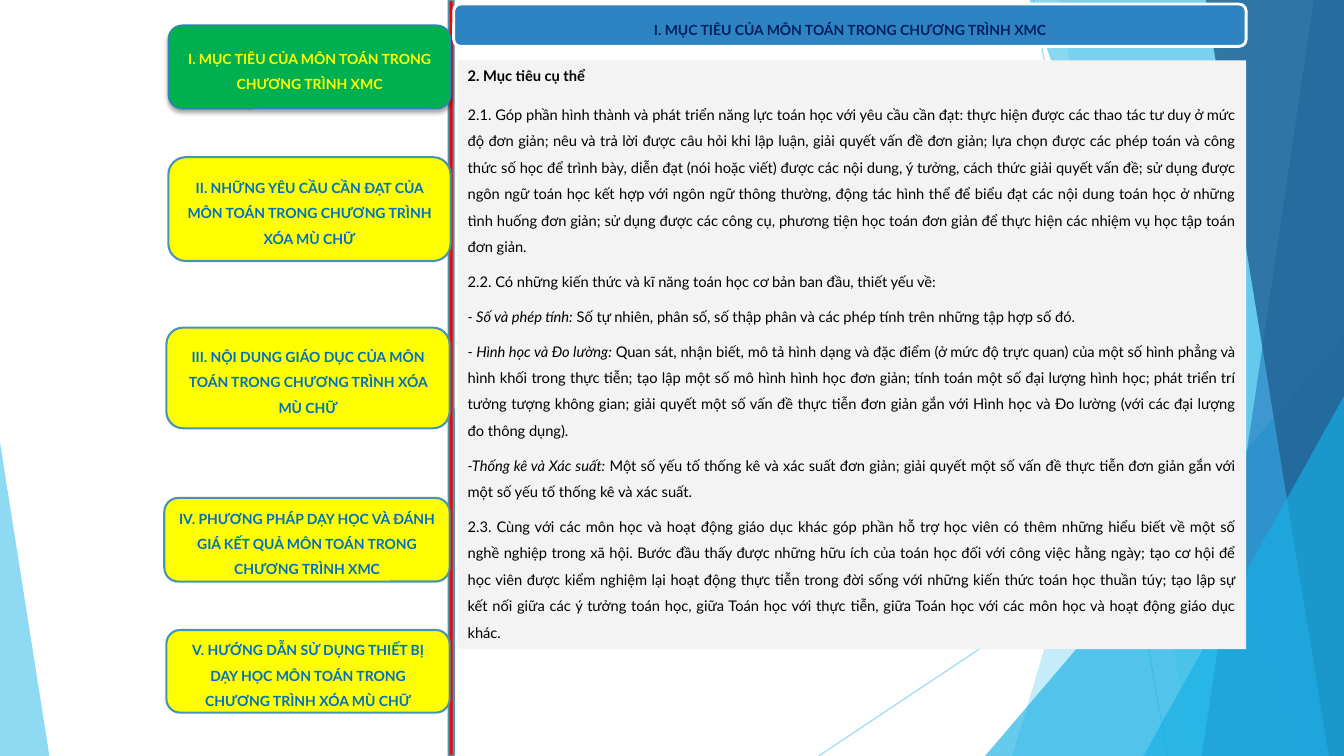
"""Build the slide on the goals of mathematics in the literacy programme."""
from pptx import Presentation
from pptx.dml.color import RGBColor
from pptx.enum.shapes import MSO_CONNECTOR, MSO_SHAPE as SHAPE
from pptx.enum.text import MSO_ANCHOR as ANCHOR, MSO_AUTO_SIZE, PP_ALIGN as ALIGN
from pptx.oxml.ns import qn
from pptx.util import Inches, Pt
from lxml.etree import SubElement

FONT = "Lato"
WIDTH, HEIGHT = 13.33, 7.5
COLORS = {
    "sky": "5FCBEF", "cyan": "17B0E4", "blue": "2E83C3", "deep": "226292",
    "teal": "4696B1", "red": "FF0000", "green": "00B050", "yellow": "FFFF00",
    "link": "0070C0", "navy": "002060", "gray": "F3F3F3", "white": "FFFFFF",
    "black": "000000",
}
HEADING = "I. MỤC TIÊU CỦA MÔN TOÁN TRONG CHƯƠNG TRÌNH XMC"
RAYS = [((10.25, 0), (11.58, 7.5)), ((13.33, 4.03), (8.12, 7.5))]
FACETS = [
    ("wedge", "sky", 36, (12.28, 10.04)),
    ("wedge", "sky", 20, (10.5, 11.83)),
    ("triangle", "cyan", 66, (9.77, 3.33, 3.56, 4.17, 1)),
    ("wedge", "cyan", 50, (10.21, 12.91)),
    ("wedge", "blue", 70, (13.03, 11.92)),
    ("wedge", "deep", 80, (11.96, 13.18)),
    ("triangle", "cyan", 66, (11.34, 3.93, 1.99, 3.57, 1)),
    ("triangle", "sky", 70, (0, 4.39, 0.49, 3.11, 0)),
]
PENDING = ("yellow", "teal", 1.5, "link")
BOXES = [
    ((1.67, 0.25, 2.8, 0.83), ("green", "blue", 1, "yellow"), HEADING),
    ((1.67, 1.56, 2.8, 1.03), PENDING,
     "II. NHỮNG YÊU CẦU CẦN ĐẠT CỦA MÔN TOÁN TRONG CHƯƠNG TRÌNH XÓA MÙ CHỮ"),
    ((1.65, 3.25, 2.81, 1), PENDING,
     "III. NỘI DUNG GIÁO DỤC CỦA MÔN TOÁN TRONG CHƯƠNG TRÌNH XÓA MÙ CHỮ"),
    ((1.63, 4.94, 2.83, 0.83), PENDING,
     "IV. PHƯƠNG PHÁP DẠY HỌC VÀ ĐÁNH GIÁ KẾT QUẢ MÔN TOÁN TRONG CHƯƠNG TRÌNH XMC"),
    ((1.65, 6.25, 2.81, 0.82), PENDING,
     "V. HƯỚNG DẪN SỬ DỤNG THIẾT BỊ DẠY HỌC MÔN TOÁN TRONG CHƯƠNG TRÌNH XÓA MÙ CHỮ"),
    ((4.5, 0.04, 7.86, 0.42), ("blue", "white", 2, "navy"), HEADING),
]
SUBTITLE = "2. Mục tiêu cụ thể"
GOALS = [
    ("", "2.1. Góp phần hình thành và phát triển năng lực toán học với yêu cầu cần đạt: "
     "thực hiện được các thao tác tư duy ở mức độ đơn giản; nêu và trả lời được câu hỏi khi "
     "lập luận, giải quyết vấn đề đơn giản; lựa chọn được các phép toán và công thức số học "
     "để trình bày, diễn đạt (nói hoặc viết) được các nội dung, ý tưởng, cách thức giải quyết "
     "vấn đề; sử dụng được ngôn ngữ toán học kết hợp với ngôn ngữ thông thường, động tác hình "
     "thể để biểu đạt các nội dung toán học ở những tình huống đơn giản; sử dụng được các công "
     "cụ, phương tiện học toán đơn giản để thực hiện các nhiệm vụ học tập toán đơn giản."),
    ("", "2.2. Có những kiến thức và kĩ năng toán học cơ bản ban đầu, thiết yếu về:"),
    ("- Số và phép tính:",
     " Số tự nhiên, phân số, số thập phân và các phép tính trên những tập hợp số đó."),
    ("- Hình học và Đo lường: ",
     "Quan sát, nhận biết, mô tả hình dạng và đặc điểm (ở mức độ trực quan) của một số hình "
     "phẳng và hình khối trong thực tiễn; tạo lập một số mô hình hình học đơn giản; tính toán "
     "một số đại lượng hình học; phát triển trí tưởng tượng không gian; giải quyết một số vấn "
     "đề thực tiễn đơn giản gắn với Hình học và Đo lường (với các đại lượng đo thông dụng)."),
    ("-Thống kê và Xác suất:",
     " Một số yếu tố thống kê và xác suất đơn giản; giải quyết một số vấn đề thực tiễn đơn "
     "giản gắn với một số yếu tố thống kê và xác suất."),
    ("", "2.3. Cùng với các môn học và hoạt động giáo dục khác góp phần hỗ trợ học viên có thêm "
     "những hiểu biết về một số nghề nghiệp trong xã hội. Bước đầu thấy được những hữu ích của "
     "toán học đối với công việc hằng ngày; tạo cơ hội để học viên được kiểm nghiệm lại hoạt "
     "động thực tiễn trong đời sống với những kiến thức toán học thuần túy; tạo lập sự kết nối "
     "giữa các ý tưởng toán học, giữa Toán học với thực tiễn, giữa Toán học với các môn học và "
     "hoạt động giáo dục khác."),
]


def color(name):
    return RGBColor.from_string(COLORS[name])


def set_alpha(s, percent):
    for clr in s._element.spPr.iter(qn("a:srgbClr")):
        SubElement(clr, qn("a:alpha"), val=str(percent * 1000))


def paint(s, fill, line=None, width=0):
    s.shadow.inherit = False
    s.fill.solid()
    s.fill.fore_color.rgb = color(fill)
    if line:
        s.line.color.rgb = color(line)
        s.line.width = Pt(width)
    else:
        s.line.fill.background()


def add_preset(shapes, kind, at):
    return shapes.add_shape(kind, *map(Inches, at))


def add_ray(shapes, start, end):
    s = shapes.add_connector(MSO_CONNECTOR.STRAIGHT, *map(Inches, start + end))
    s.line.color.rgb = color("sky")
    s.line.width = Pt(0.75)
    set_alpha(s, 70)
    SubElement(s._element.spPr, qn("a:effectLst"))


def add_facet(shapes, kind, fill, alpha, geometry):
    if kind == "triangle":
        *at, apex = geometry
        s = add_preset(shapes, SHAPE.ISOSCELES_TRIANGLE, at)
        s.adjustments[0] = apex
    else:
        top, bottom = geometry
        corners = [(WIDTH, 0), (WIDTH, HEIGHT), (bottom, HEIGHT)]
        outline = shapes.build_freeform(Inches(top), 0)
        outline.add_line_segments([tuple(map(Inches, c)) for c in corners])
        s = outline.convert_to_shape()
    paint(s, fill)
    set_alpha(s, alpha)


def add_run(p, text, size, name, bold=False, italic=False):
    r = p.add_run()
    r.text = text
    r.font.name, r.font.size = FONT, Pt(size)
    r.font.bold, r.font.italic = bold, italic
    r.font.color.rgb = color(name)


def add_box(shapes, at, style, text):
    fill, line, width, ink = style
    s = add_preset(shapes, SHAPE.ROUNDED_RECTANGLE, at)
    paint(s, fill, line, width)
    tf = s.text_frame
    tf.word_wrap, tf.vertical_anchor = True, ANCHOR.MIDDLE
    p = tf.paragraphs[0]
    p.alignment, p.line_spacing = ALIGN.CENTER, 1.5
    add_run(p, text, 10, ink, bold=True)
    return s


def add_drop_shadow(s):
    effects = s._element.spPr.find(qn("a:effectLst"))
    shadow = SubElement(effects, qn("a:outerShdw"), blurRad=str(Pt(3)),
                        dist=str(Pt(2)), dir="5400000", rotWithShape="0")
    clr = SubElement(shadow, qn("a:srgbClr"), val=COLORS["black"])
    SubElement(clr, qn("a:alpha"), val="35000")


def add_goals(shapes):
    s = shapes.add_textbox(*map(Inches, (4.54, 0.6, 7.82, 5.84)))
    s.fill.solid()
    s.fill.fore_color.rgb = color("gray")
    tf = s.text_frame
    tf.word_wrap, tf.auto_size = True, MSO_AUTO_SIZE.SHAPE_TO_FIT_TEXT
    p = tf.paragraphs[0]
    p.line_spacing, p.space_after = 1.07, Pt(3)
    add_run(p, SUBTITLE, 10.5, "black", bold=True)
    for lead, text in GOALS:
        p = tf.add_paragraph()
        p.alignment, p.line_spacing, p.space_before = ALIGN.JUSTIFY, 1.5, Pt(6)
        if lead:
            add_run(p, lead, 10.5, "black", italic=True)
        add_run(p, text, 10.5, "black")


def main():
    prs = Presentation()
    prs.slide_width, prs.slide_height = Inches(WIDTH), Inches(HEIGHT)
    shapes = prs.slides.add_slide(prs.slide_layouts[6]).shapes
    for start, end in RAYS:
        add_ray(shapes, start, end)
    for facet in FACETS:
        add_facet(shapes, *facet)
    divider = add_preset(shapes, SHAPE.ROUNDED_RECTANGLE, (4.45, 0, 0.05, HEIGHT))
    paint(divider, "red", "teal", 1.5)
    boxes = [add_box(shapes, *box) for box in BOXES]
    add_drop_shadow(boxes[0])
    add_goals(shapes)
    prs.save("out.pptx")


if __name__ == "__main__":
    main()
